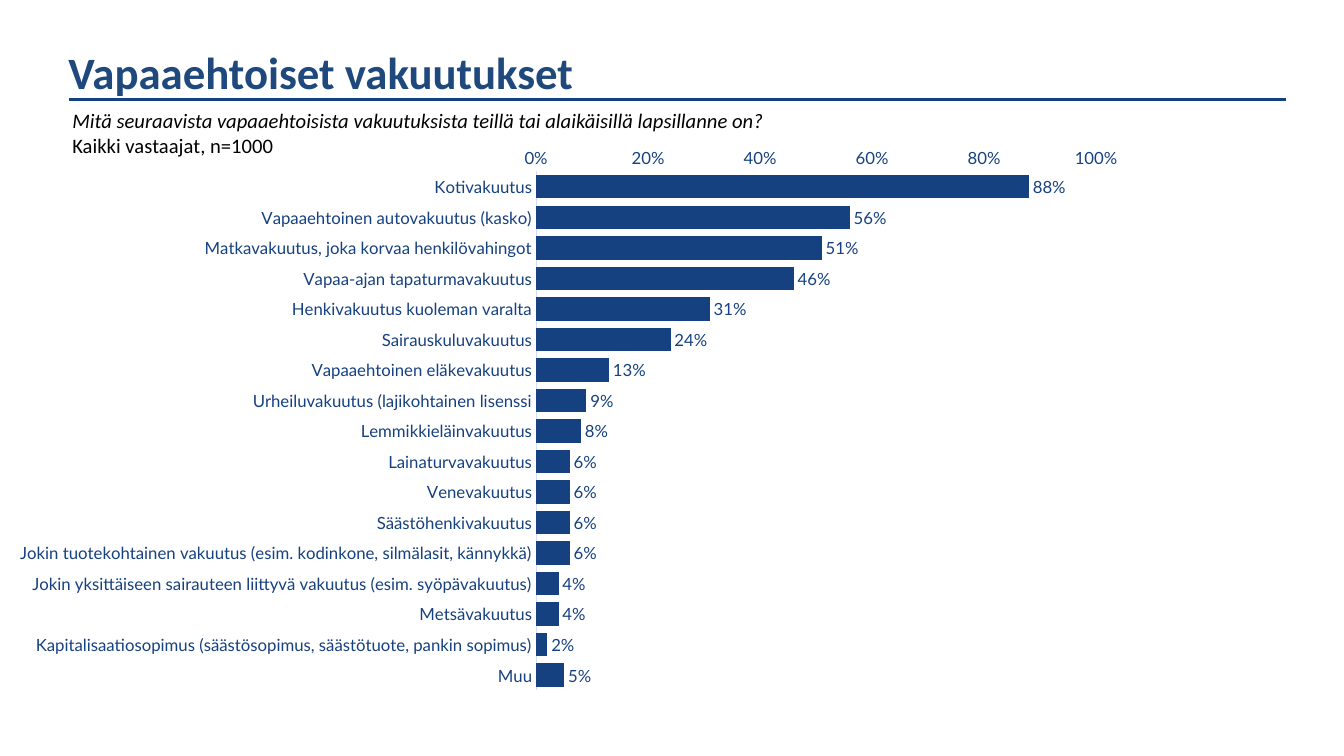
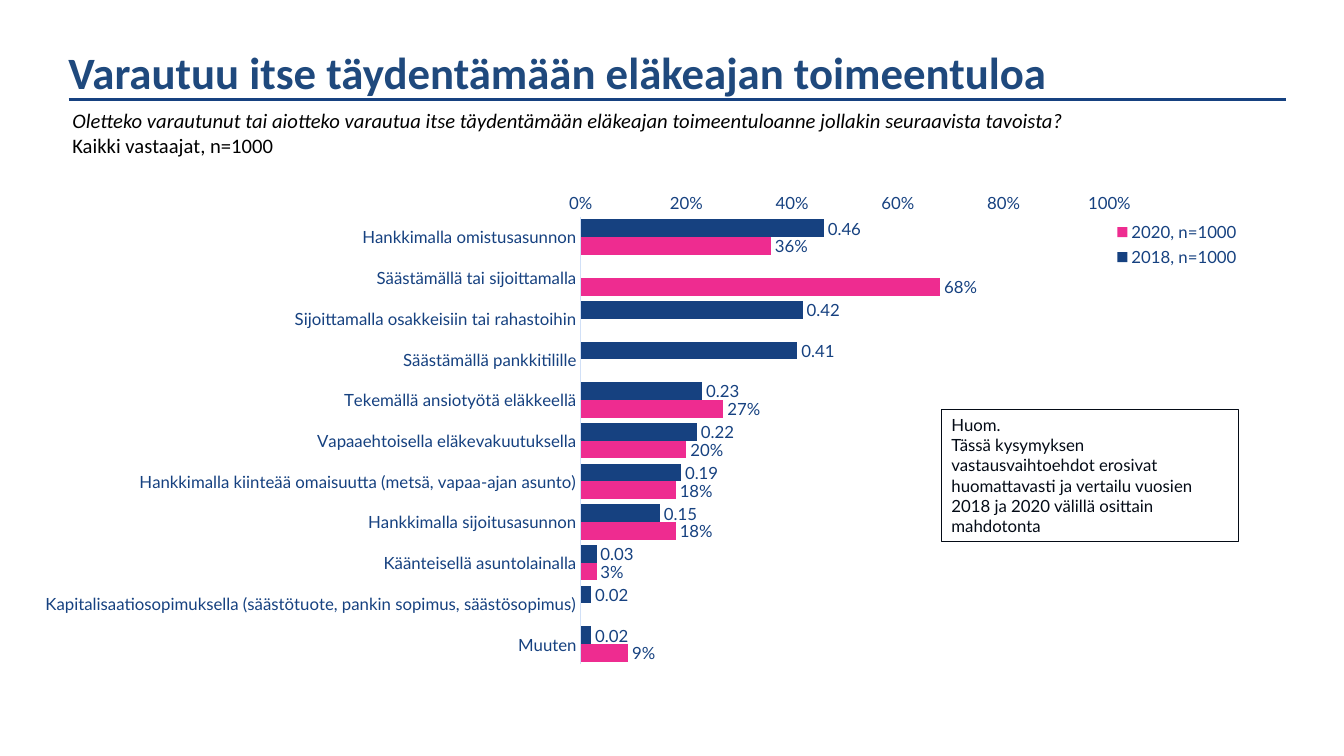
from dataclasses import dataclass
from typing import Any, Optional

from lxml import etree
from pptx import Presentation
from pptx.chart.data import CategoryChartData
from pptx.dml.color import RGBColor
from pptx.enum.chart import (
    XL_AXIS_CROSSES,
    XL_CHART_TYPE,
    XL_LABEL_POSITION,
    XL_LEGEND_POSITION,
    XL_TICK_MARK,
)
from pptx.enum.shapes import MSO_CONNECTOR, MSO_SHAPE
from pptx.enum.text import MSO_ANCHOR, MSO_AUTO_SIZE, PP_ALIGN
from pptx.oxml.ns import qn
from pptx.util import Pt

BAR_CLUSTERED = XL_CHART_TYPE.BAR_CLUSTERED
AXIS_MAXIMUM = XL_AXIS_CROSSES.MAXIMUM
OUTSIDE_END = XL_LABEL_POSITION.OUTSIDE_END
LEGEND_RIGHT = XL_LEGEND_POSITION.RIGHT
NO_TICK = XL_TICK_MARK.NONE
STRAIGHT = MSO_CONNECTOR.STRAIGHT
RECTANGLE = MSO_SHAPE.RECTANGLE
TOP, MIDDLE = MSO_ANCHOR.TOP, MSO_ANCHOR.MIDDLE
GROW = MSO_AUTO_SIZE.SHAPE_TO_FIT_TEXT
LEFT = PP_ALIGN.LEFT

COLORS = {
    "title": "1F497D",
    "navy": "164180",
    "pink": "EE2C90",
    "axis": "D1E0F7",
    "black": "000000",
    "note": "040B16",
}
TITLE_FORMAT = {"name": "Calibri", "size": Pt(32), "bold": True, "color": "title"}
SAMPLE_FORMAT = {"name": "Calibri", "size": Pt(14.7), "italic": False, "color": "black"}
QUESTION_FORMAT = {**SAMPLE_FORMAT, "italic": True}
CHART_FORMAT = {"name": "Lato", "size": Pt(12), "color": "navy"}
NOTE_FORMAT = {**CHART_FORMAT, "color": "note"}
SAMPLE = "Kaikki vastaajat, n=1000"


@dataclass(frozen=True)
class Area:
    left: float
    top: float
    width: float
    height: float

    def lengths(self) -> tuple[Pt, Pt, Pt, Pt]:
        return Pt(self.left), Pt(self.top), Pt(self.width), Pt(self.height)


@dataclass(frozen=True)
class BarSeries:
    name: str
    color: str
    label_format: str
    values: tuple[Optional[float], ...]


@dataclass(frozen=True)
class SurveySlide:
    title: str
    question: str
    area: Area
    plot: Area
    categories: tuple[str, ...]
    series: tuple[BarSeries, ...]
    legend: Optional[Area] = None
    note: tuple[str, ...] = ()


TITLE_AREA = Area(41.8, 28.4, 869, 46)
QUESTION_AREA = Area(44.6, 73.4, 873.4, 42.5)
NOTE_AREA = Area(672.5, 292.3, 212.4, 94.3)
RULE_LEFT, RULE_RIGHT, RULE_TOP = 49, 918.7, 71.3

SURVEY_SLIDES = (
    SurveySlide(
        title="Vapaaehtoiset vakuutukset",
        question="Mitä seuraavista vapaaehtoisista vakuutuksista teillä tai "
        "alaikäisillä lapsillanne on?",
        area=Area(14.4, 95.8, 879.1, 430.6),
        plot=Area(0.418, 0.062, 0.456, 0.861),
        categories=(
            "Kotivakuutus",
            "Vapaaehtoinen autovakuutus (kasko)",
            "Matkavakuutus, joka korvaa henkilövahingot",
            "Vapaa-ajan tapaturmavakuutus",
            "Henkivakuutus kuoleman varalta",
            "Sairauskuluvakuutus",
            "Vapaaehtoinen eläkevakuutus",
            "Urheiluvakuutus (lajikohtainen lisenssi",
            "Lemmikkieläinvakuutus",
            "Lainaturvavakuutus",
            "Venevakuutus",
            "Säästöhenkivakuutus",
            "Jokin tuotekohtainen vakuutus (esim. kodinkone, silmälasit, kännykkä)",
            "Jokin yksittäiseen sairauteen liittyvä vakuutus (esim. syöpävakuutus)",
            "Metsävakuutus",
            "Kapitalisaatiosopimus (säästösopimus, säästötuote, pankin sopimus)",
            "Muu",
        ),
        series=(
            BarSeries("Kaikki vastaajat", "navy", "0%", (
                0.88, 0.56, 0.51, 0.46, 0.31, 0.24, 0.13, 0.09, 0.08,
                0.06, 0.06, 0.06, 0.06, 0.04, 0.04, 0.02, 0.05,
            )),
        ),
    ),
    SurveySlide(
        title="Varautuu itse täydentämään eläkeajan toimeentuloa",
        question="Oletteko varautunut tai aiotteko varautua itse täydentämään "
        "eläkeajan toimeentuloanne jollakin seuraavista tavoista?",
        area=Area(15.1, 127.4, 878.4, 371.5),
        plot=Area(0.455, 0.074, 0.43, 0.861),
        categories=(
            "Hankkimalla omistusasunnon",
            "Säästämällä tai sijoittamalla",
            "Sijoittamalla osakkeisiin tai rahastoihin",
            "Säästämällä pankkitilille",
            "Tekemällä ansiotyötä eläkkeellä",
            "Vapaaehtoisella eläkevakuutuksella",
            "Hankkimalla kiinteää omaisuutta (metsä, vapaa-ajan asunto)",
            "Hankkimalla sijoitusasunnon",
            "Käänteisellä asuntolainalla",
            "Kapitalisaatiosopimuksella (säästötuote, pankin sopimus, säästösopimus)",
            "Muuten",
        ),
        series=(
            BarSeries("2018, n=1000", "navy", "General", (
                0.46, None, 0.42, 0.41, 0.23, 0.22, 0.19, 0.15, 0.03, 0.02, 0.02,
            )),
            BarSeries("2020, n=1000", "pink", "0%", (
                0.36, 0.68, None, None, 0.27, 0.2, 0.18, 0.18, 0.03, None, 0.09,
            )),
        ),
        legend=Area(0.885, 0.075, 0.11, 0.105),
        note=(
            "Huom.",
            "Tässä kysymyksen vastausvaihtoehdot erosivat huomattavasti ja "
            "vertailu vuosien 2018 ja 2020 välillä osittain mahdotonta",
        ),
    ),
)


def rgb(color: str) -> RGBColor:
    return RGBColor.from_string(COLORS[color])


def set_values(target: Any, values: dict[str, Any]) -> None:
    for name, value in values.items():
        setattr(target, name, value)


def set_font(font: Any, values: dict[str, Any]) -> None:
    for name, value in values.items():
        if name == "color":
            font.color.rgb = rgb(value)
        else:
            setattr(font, name, value)


def write_text(box: Any, lines: list[tuple[str, dict[str, Any]]], anchor: Any = TOP) -> None:
    frame = box.text_frame
    set_values(frame, {"word_wrap": True, "auto_size": GROW, "vertical_anchor": anchor})
    for index, (text, text_format) in enumerate(lines):
        para = frame.add_paragraph() if index else frame.paragraphs[0]
        para.alignment = LEFT
        span = para.add_run()
        span.text = text
        set_font(span.font, text_format)


def add_heading(slide: Any, survey: SurveySlide) -> None:
    rule = slide.shapes.add_connector(
        STRAIGHT, Pt(RULE_LEFT), Pt(RULE_TOP), Pt(RULE_RIGHT), Pt(RULE_TOP)
    )
    rule.line.color.rgb = rgb("navy")
    rule.line.width = Pt(2.25)
    etree.SubElement(rule._element.spPr, qn("a:effectLst"))
    title = slide.shapes.add_textbox(*TITLE_AREA.lengths())
    write_text(title, [(survey.title, TITLE_FORMAT)])
    question = slide.shapes.add_textbox(*QUESTION_AREA.lengths())
    write_text(question, [(survey.question, QUESTION_FORMAT), (SAMPLE, SAMPLE_FORMAT)])


def set_layout(parent: Any, index: int, area: Area, inner: bool) -> None:
    for old in parent.findall(qn("c:layout")):
        parent.remove(old)
    layout = etree.Element(qn("c:layout"))
    manual = etree.SubElement(layout, qn("c:manualLayout"))
    entries = [("layoutTarget", "inner")] if inner else []
    entries += [("xMode", "edge"), ("yMode", "edge")]
    entries += zip("xywh", (area.left, area.top, area.width, area.height))
    for tag, value in entries:
        etree.SubElement(manual, qn(f"c:{tag}")).set("val", str(value))
    parent.insert(index, layout)


def style_axes(chart: Any) -> None:
    ticks = {"major_tick_mark": NO_TICK, "minor_tick_mark": NO_TICK}
    category_axis, value_axis = chart.category_axis, chart.value_axis
    set_values(category_axis, {**ticks, "reverse_order": True, "crosses": AXIS_MAXIMUM})
    category_axis.format.line.color.rgb = rgb("axis")
    category_axis.format.line.width = Pt(0.75)
    set_values(value_axis, {
        **ticks,
        "minimum_scale": 0,
        "maximum_scale": 1,
        "major_unit": 0.2,
        "has_major_gridlines": False,
    })
    value_axis.format.line.fill.background()
    set_values(value_axis.tick_labels, {"number_format": "0%", "number_format_is_linked": False})
    for axis in (category_axis, value_axis):
        set_font(axis.tick_labels.font, CHART_FORMAT)


def style_series(bars: Any, series: BarSeries) -> None:
    bars.format.fill.solid()
    bars.format.fill.fore_color.rgb = rgb(series.color)
    bars.invert_if_negative = False
    labels = bars.data_labels
    set_values(labels, {
        "show_value": True,
        "position": OUTSIDE_END,
        "number_format": series.label_format,
        "number_format_is_linked": False,
    })
    set_font(labels.font, CHART_FORMAT)


def add_bar_chart(slide: Any, survey: SurveySlide) -> None:
    data = CategoryChartData()
    data.categories = survey.categories
    for series in survey.series:
        data.add_series(series.name, series.values)
    chart = slide.shapes.add_chart(BAR_CLUSTERED, *survey.area.lengths(), data).chart
    set_values(chart, {"has_title": False, "has_legend": survey.legend is not None})
    set_font(chart.font, CHART_FORMAT)
    plot = chart.plots[0]
    set_values(plot, {"gap_width": 30, "overlap": 0, "vary_by_categories": False})
    style_axes(chart)
    for bars, series in zip(plot.series, survey.series):
        style_series(bars, series)
    set_layout(chart._chartSpace.chart.plotArea, 0, survey.plot, True)
    if survey.legend:
        set_values(chart.legend, {"position": LEGEND_RIGHT, "include_in_layout": False})
        set_font(chart.legend.font, CHART_FORMAT)
        set_layout(chart.legend._element, 1, survey.legend, False)


def add_note(slide: Any, lines: tuple[str, ...]) -> None:
    box = slide.shapes.add_shape(RECTANGLE, *NOTE_AREA.lengths())
    box.shadow.inherit = False
    box.fill.background()
    box.line.color.rgb = rgb("note")
    box.line.width = Pt(0.75)
    write_text(box, [(line, NOTE_FORMAT) for line in lines], MIDDLE)


def main() -> None:
    deck = Presentation()
    set_values(deck, {"slide_width": Pt(960), "slide_height": Pt(540)})
    blank = deck.slide_layouts[6]
    for survey in SURVEY_SLIDES:
        slide = deck.slides.add_slide(blank)
        add_bar_chart(slide, survey)
        add_heading(slide, survey)
        if survey.note:
            add_note(slide, survey.note)
    deck.save("out.pptx")


if __name__ == "__main__":
    main()
